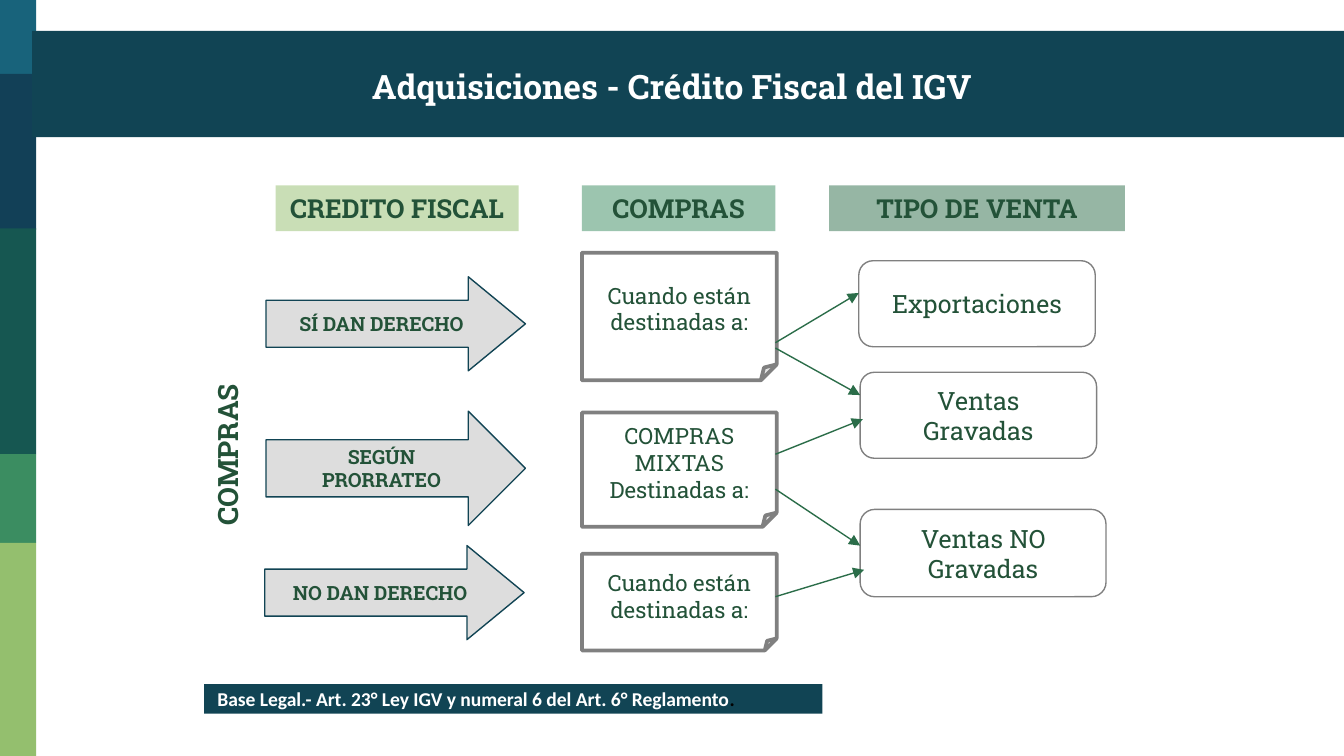
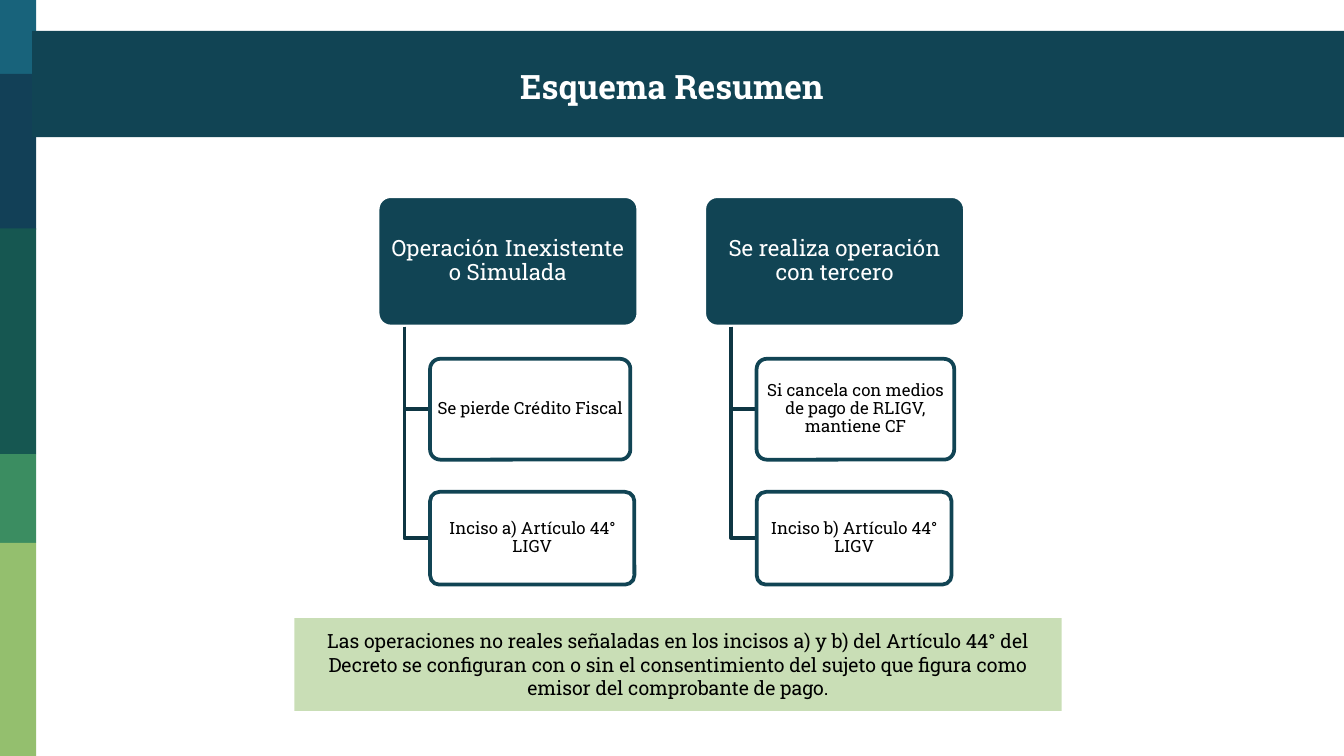
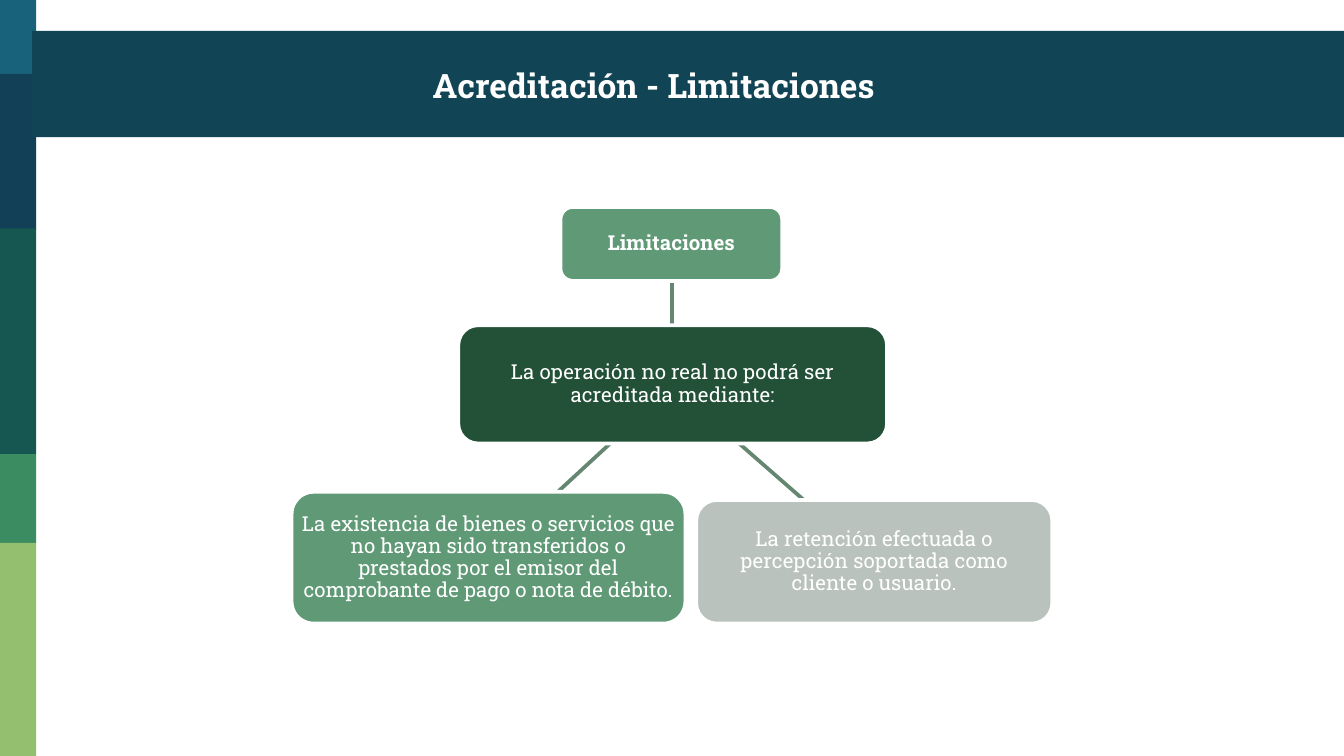
from lxml import etree
from pptx import Presentation
from pptx.dml.color import RGBColor
from pptx.enum.shapes import MSO_CONNECTOR, MSO_SHAPE
from pptx.enum.text import MSO_ANCHOR, PP_ALIGN
from pptx.oxml.ns import qn
from pptx.util import Pt

RECT = MSO_SHAPE.RECTANGLE
ROUNDED = MSO_SHAPE.ROUNDED_RECTANGLE
ARROW = MSO_SHAPE.RIGHT_ARROW
FOLDED = MSO_SHAPE.FOLDED_CORNER
STRAIGHT = MSO_CONNECTOR.STRAIGHT
LEFT, CENTER = PP_ALIGN.LEFT, PP_ALIGN.CENTER
TOP, MIDDLE = MSO_ANCHOR.TOP, MSO_ANCHOR.MIDDLE

SLAB, SANS = "Roboto Slab", "Calibri"
COLORS = {
    "white": "FFFFFF", "black": "000000", "grey": "808080", "silver": "DDDDDD",
    "blue": "18637B", "navy": "124057", "teal": "165751", "green": "3B8D61",
    "lime": "94BF6E", "petrol": "114454", "trunk": "0E3643", "ink": "235238",
    "moss": "2E6E4B", "link": "2B6D49", "forest": "225137", "sage": "5F9976",
    "ash": "BAC2BD", "branch": "658771",
}
SIDE_STRIPES = [("blue", 0, 41.76), ("navy", 39.6, 83.52), ("teal", 122.4, 120.96),
                ("green", 243.36, 47.52), ("lime", 290.88, 114.12)]


def rgb(name):
    return RGBColor.from_string(COLORS[name])


def write(shape, *paragraphs, size=10.5, font=SLAB, color="ink", bold=False, align=CENTER,
          anchor=MIDDLE, inset=(7.2, 3.6), spacing=None, vertical=None):
    frame = shape.text_frame
    frame.word_wrap = True
    frame.vertical_anchor = anchor
    frame.margin_left = frame.margin_right = Pt(inset[0])
    frame.margin_top = frame.margin_bottom = Pt(inset[1])
    if vertical:
        frame._txBody.find(qn("a:bodyPr")).set("vert", vertical)
    for index, content in enumerate(paragraphs):
        paragraph = frame.add_paragraph() if index else frame.paragraphs[0]
        paragraph.alignment = align
        if spacing:
            paragraph.line_spacing = spacing
        pieces = [(content, color)] if isinstance(content, str) else content
        for words, ink in pieces:
            run = paragraph.add_run()
            run.text = words
            run.font.name, run.font.size, run.font.bold = font, Pt(size), bold
            run.font.color.rgb = rgb(ink)


def paint(shape, fill=None, alpha=None, line=None, weight=0.75):
    shape.shadow.inherit = False
    if fill:
        shape.fill.solid()
        shape.fill.fore_color.rgb = rgb(fill)
        if alpha:
            color = shape.element.spPr.find(qn("a:solidFill"))[0]
            etree.SubElement(color, qn("a:alpha"), val=str(alpha * 1000))
    else:
        shape.fill.background()
    if line:
        shape.line.color.rgb = rgb(line)
        shape.line.width = Pt(weight)
    else:
        shape.line.fill.background()


def bend(shape, values):
    geometry = shape.element.spPr.find(qn("a:prstGeom"))
    for old in geometry.findall(qn("a:avLst")):
        geometry.remove(old)
    guides = etree.SubElement(geometry, qn("a:avLst"))
    for number, value in enumerate(values, 1):
        name = f"adj{number}" if len(values) > 1 else "adj"
        etree.SubElement(guides, qn("a:gd"), name=name, fmla=f"val {round(value * 100000)}")


def block(slide, kind, left, top, width, height, adjust=(), **look):
    shape = slide.shapes.add_shape(kind, Pt(left), Pt(top), Pt(width), Pt(height))
    if adjust:
        bend(shape, adjust)
    paint(shape, **look)
    return shape


def label(slide, left, top, width, height, *paragraphs, **text_format):
    area = slide.shapes.add_textbox(Pt(left), Pt(top), Pt(width), Pt(height))
    write(area, *paragraphs, **text_format)


def connect(slide, start, end, color, weight, arrow=False):
    link = slide.shapes.add_connector(STRAIGHT, *(Pt(v) for v in (*start, *end)))
    link.line.color.rgb = rgb(color)
    link.line.width = Pt(weight)
    if arrow:
        outline = link.element.spPr.find(qn("a:ln"))
        etree.SubElement(outline, qn("a:tailEnd"), type="triangle")
    etree.SubElement(link.element.spPr, qn("a:effectLst"))


def base_slide(deck, title, title_box=(156.24, 31.68, 407.52, 28.8), **title_format):
    slide = deck.slides.add_slide(deck.slide_layouts[6])
    for color, top, height in SIDE_STRIPES:
        block(slide, RECT, 0, top, 19.44, height, fill=color)
    block(slide, RECT, 17.28, 16.56, 702.72, 56.88, fill="petrol")
    look = {"size": 18, "color": "white", "bold": True, "anchor": TOP, **title_format}
    label(slide, *title_box, title, **look)
    return slide


def headings(slide, left, top, height):
    for words, offset, width, tint in [("CREDITO FISCAL", 0, 130.32, "lime"),
                                       ("COMPRAS", 164.16, 103.68, "green"),
                                       ("TIPO DE VENTA", 296.64, 158.4, "moss")]:
        heading = block(slide, RECT, left + offset, top, width, height, fill=tint, alpha=50)
        write(heading, words, size=14, bold=True, inset=(0, 3.6))


def credit_arrows(slide, left, top, width, step):
    rights = [(["SÍ DAN DERECHO"], 0, 50.4), (["SEGÚN", "PRORRATEO"], 0, 61.2),
              (["NO DAN DERECHO"], -0.72, 50.4)]
    for index, (lines, shift, height) in enumerate(rights):
        right = block(slide, ARROW, left + shift, top + index * step, width, height,
                      adjust=(0.5, 30.6 / height), fill="silver", line="petrol")
        write(right, *lines, bold=True)


def purchase_notes(slide, left, top, width):
    destined = ["Cuando están destinadas a:"]
    for lines, offset, height in [(destined, 0, 68.4),
                                  (["COMPRAS MIXTAS", "Destinadas a:"], 85.68, 61.2),
                                  (destined, 161.28, 51.84)]:
        note = block(slide, FOLDED, left, top + offset, width, height, adjust=(0.125,),
                     fill="white", alpha=50, line="grey", weight=2)
        write(note, *lines, size=12)


def sale_types(slide, left, top):
    for lines, shift, offset, width, height in [
            (["Exportaciones"], 0, 0, 126.72, 46.08),
            (["Ventas", "Gravadas"], 0.72, 59.76, 126.72, 46.08),
            (["Ventas NO", "Gravadas"], 0.72, 133.2, 131.76, 46.8)]:
        sale = block(slide, ROUNDED, left + shift, top + offset, width, height, line="grey")
        write(sale, *lines, size=13.5)


def sale_links(slide, left, top):
    for start, reach, end in [(29.52, 45.36, 54.72), (26.64, 44.64, 0), (105.12, 45.36, 135.36),
                              (86.4, 46.8, 67.68), (162.72, 47.52, 148.32)]:
        connect(slide, (left, top + start), (left + reach, top + end), "link", 0.75, arrow=True)


def acquisitions(deck):
    slide = base_slide(deck, "Adquisiciones - Crédito Fiscal del IGV")
    legal_basis = block(slide, RECT, 109.44, 366.48, 331.2, 15.84, fill="petrol")
    write(legal_basis,
          [("Base Legal.- Art. 23° Ley IGV y numeral 6 del Art. 6° Reglamento", "white"),
           (".", "black")],
          font=SANS, bold=True, align=LEFT, inset=(7.2, 0))
    label(slide, 109.44, 167.76, 32.4, 151.92, "COMPRAS", size=15, bold=True,
          anchor=TOP, vertical="vert270")
    headings(slide, 147.6, 99.36, 24.48)
    credit_arrows(slide, 142.56, 148.32, 138.96, 72)
    purchase_notes(slide, 311.76, 135.36, 104.4)
    sale_types(slide, 460.08, 139.68)
    sale_links(slide, 415.44, 156.96)


def operation_column(slide, left, top, operation, outcomes):
    head_width, head_height, trunk, indent = 139.68, 69.84, 14.4, 28.08
    head = block(slide, ROUNDED, left, top, head_width, head_height, adjust=(0.1,),
                 fill="petrol", line="white", weight=2)
    write(head, operation, size=12, color="white", inset=(2, 1.5), spacing=0.9)
    rows = [(87.12, 54), (158.4, 49.68)]
    for (words, width), (offset, height) in zip(outcomes, rows):
        middle = top + offset + height / 2
        elbow = slide.shapes.build_freeform(Pt(left + trunk), Pt(top + head_height))
        elbow.add_line_segments([(Pt(left + trunk), Pt(middle)),
                                 (Pt(left + indent), Pt(middle))], close=False)
        paint(elbow.convert_to_shape(), line="trunk", weight=2)
        outcome = block(slide, ROUNDED, left + indent, top + offset, width, height,
                        adjust=(0.1,), fill="white", alpha=90, line="petrol", weight=2)
        write(outcome, words, size=9, color="black", inset=(1.4, 1), spacing=0.9)


def summary(deck):
    slide = base_slide(deck, "Esquema Resumen")
    operation_column(slide, 202.32, 105.12, "Operación Inexistente o Simulada",
                     [("Se pierde Crédito Fiscal", 107.28),
                      ("Inciso a) Artículo 44° LIGV", 109.44)])
    operation_column(slide, 377.28, 105.12, "Se realiza operación con tercero",
                     [("Si cancela con medios de pago de RLIGV, mantiene CF", 105.84),
                      ("Inciso b) Artículo 44° LIGV", 104.4)])
    remark = block(slide, RECT, 157.68, 331.2, 411.12, 49.68, fill="lime", alpha=50)
    write(remark, "Las operaciones no reales señaladas en los incisos a) y b) del Artículo 44° "
          "del Decreto se configuran con o sin el consentimiento del sujeto que figura como "
          "emisor del comprobante de pago.", color="black")


def limitation_tree(slide, left, top):
    for start, end in [((203.76, 63.36), (203.76, 38.88)), ((239.76, 126.72), (274.32, 156.96)),
                       ((170.64, 126.72), (142.56, 152.64))]:
        connect(slide, (left + start[0], top + start[1]), (left + end[0], top + end[1]),
                "branch", 2)
    for words, x, y, width, height, fill, bold in [
            ("Limitaciones", 144, 0, 118.8, 39.6, "sage", True),
            ("La operación no real no podrá ser acreditada mediante:",
             89.28, 63.36, 229.68, 63.36, "forest", False),
            ("La existencia de bienes o servicios que no hayan sido transferidos o prestados "
             "por el emisor del comprobante de pago o nota de débito.",
             0, 152.64, 210.96, 70.56, "sage", False),
            ("La retención efectuada o percepción soportada como cliente o usuario.",
             216.72, 156.96, 190.8, 66.24, "ash", False)]:
        node = block(slide, ROUNDED, left + x, top + y, width, height,
                     fill=fill, line="white", weight=2)
        write(node, words, size=11, color="white", bold=bold, inset=(2, 2), spacing=0.9)


def limitations(deck):
    slide = base_slide(deck, "Acreditación - Limitaciones", (224.64, 23.04, 252.72, 44.64),
                       align=LEFT, anchor=MIDDLE, inset=(7.2, 7.2))
    limitation_tree(slide, 156.24, 110.88)


def main():
    deck = Presentation()
    deck.slide_width, deck.slide_height = Pt(720), Pt(405)
    acquisitions(deck)
    summary(deck)
    limitations(deck)
    deck.save("out.pptx")


if __name__ == "__main__":
    main()
